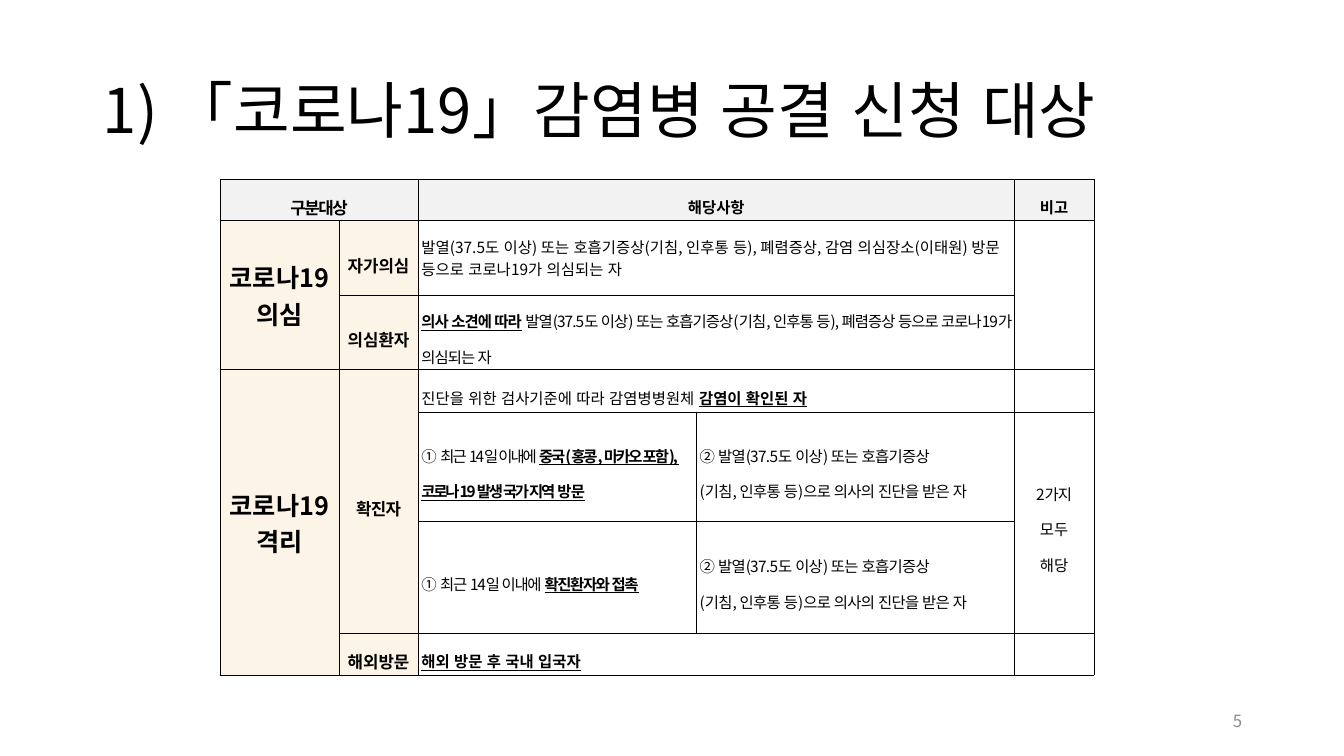
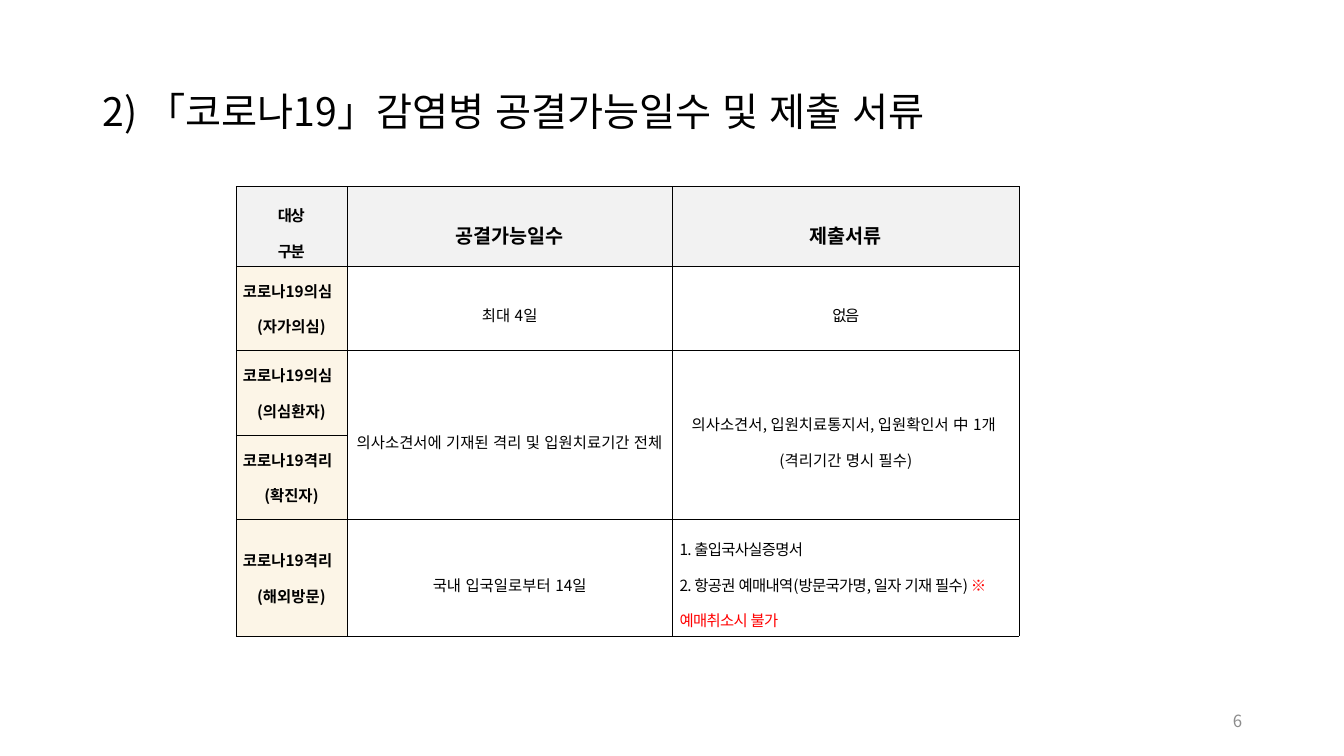
from dataclasses import dataclass
from typing import Optional

from lxml.etree import SubElement
from pptx import Presentation
from pptx.dml.color import RGBColor
from pptx.enum.text import MSO_ANCHOR, MSO_AUTO_SIZE, PP_ALIGN
from pptx.oxml.ns import qn
from pptx.slide import Slide
from pptx.table import _Cell
from pptx.text.text import TextFrame
from pptx.util import Inches, Pt

FONT = "Noto Sans CJK KR"
BLACK, GRAY, RED = "000000", "8C8C8C", "FF0000"
HEADER_FILL, LABEL_FILL = "F2F2F2", "FCF5E7"
BORDER_WIDTH = 0.28
LEFT, CENTER, RIGHT, JUSTIFY = (
    PP_ALIGN.LEFT, PP_ALIGN.CENTER, PP_ALIGN.RIGHT, PP_ALIGN.JUSTIFY)


@dataclass
class Span:
    text: str
    size: float = 11
    bold: bool = False
    underline: bool = False
    spacing: float = 0
    color: str = BLACK


@dataclass
class Para:
    spans: list[Span]
    align: PP_ALIGN = CENTER
    line: float = 1.6


@dataclass
class Entry:
    """Content of a table cell, with the rows and columns it covers."""
    row: int
    column: int
    paras: list[Para]
    fill: Optional[str] = None
    rows: int = 1
    columns: int = 1


@dataclass
class Grid:
    left: float
    top: float
    widths: list[float]
    heights: list[float]
    margins: tuple[float, float]
    entries: list[Entry]


@dataclass
class Page:
    title: str
    title_size: float
    number: str
    grid: Grid


def rgb(color: str) -> RGBColor:
    return RGBColor.from_string(color)


def write(frame: TextFrame, paras: list[Para]) -> None:
    for index, para in enumerate(paras):
        target = frame.add_paragraph() if index else frame.paragraphs[0]
        target.alignment, target.line_spacing = para.align, para.line
        for span in para.spans:
            run = target.add_run()
            run.text = span.text
            style = {"name": FONT, "size": Pt(span.size), "bold": span.bold,
                     "underline": span.underline}
            for name, value in style.items():
                setattr(run.font, name, value)
            run.font.color.rgb = rgb(span.color)
            properties = run.font._element
            properties.set("lang", "ko-KR")
            properties.set("spc", str(round(span.spacing * 100)))
            SubElement(properties, qn("a:ea")).set("typeface", FONT)


def add_borders(cell: _Cell) -> None:
    properties = cell._tc.get_or_add_tcPr()
    for side in ("lnL", "lnR", "lnT", "lnB"):
        line = SubElement(properties, qn(f"a:{side}"), w=str(Pt(BORDER_WIDTH)))
        fill = SubElement(line, qn("a:solidFill"))
        SubElement(fill, qn("a:srgbClr"), val=BLACK)


def add_grid(slide: Slide, grid: Grid) -> None:
    table = slide.shapes.add_table(
        len(grid.heights), len(grid.widths), Inches(grid.left), Inches(grid.top),
        Inches(sum(grid.widths)), Inches(sum(grid.heights))).table
    table.first_row = table.horz_banding = False
    for column, width in zip(table.columns, grid.widths):
        column.width = Inches(width)
    for row, height in zip(table.rows, grid.heights):
        row.height = Inches(height)
    side, end = (Inches(margin) for margin in grid.margins)
    layout = {"margin_left": side, "margin_right": side, "margin_top": end,
              "margin_bottom": end, "vertical_anchor": MSO_ANCHOR.MIDDLE}
    for cell in table.iter_cells():
        add_borders(cell)
        cell.fill.background()
        cell.text_frame.paragraphs[0].font.size = Pt(11)
        for name, value in layout.items():
            setattr(cell, name, value)
    for entry in grid.entries:
        cell = table.cell(entry.row, entry.column)
        if entry.rows > 1 or entry.columns > 1:
            cell.merge(table.cell(entry.row + entry.rows - 1,
                                  entry.column + entry.columns - 1))
        if entry.fill:
            cell.fill.solid()
            cell.fill.fore_color.rgb = rgb(entry.fill)
        write(cell.text_frame, entry.paras)


def add_page(deck: Presentation, page: Page) -> None:
    slide = deck.slides.add_slide(deck.slide_layouts.get_by_name("Title Only"))
    title = slide.shapes.title
    title.left, title.top, title.width, title.height = map(
        Inches, (0.92, 0.4, 11.5, 1.45))
    number = slide.shapes.add_textbox(*map(Inches, (9.42, 6.95, 3, 0.4)))
    title_para = Para([Span(page.title, page.title_size)], LEFT, 0.9)
    number_para = Para([Span(page.number, 12, color=GRAY)], RIGHT, 1)
    for box, para in ((title, title_para), (number, number_para)):
        frame = box.text_frame
        frame.word_wrap = True
        frame.auto_size = MSO_AUTO_SIZE.NONE
        frame.vertical_anchor = MSO_ANCHOR.MIDDLE
        write(frame, [para])
    add_grid(slide, page.grid)


def line(text: str, align: PP_ALIGN = CENTER, spacing: float = 0) -> Para:
    return Para([Span(text, spacing=spacing)], align)


def header(column: int, *texts: str, size: float = 11, spacing: float = 0,
           columns: int = 1) -> Entry:
    paras = [Para([Span(text, size, True, spacing=spacing)]) for text in texts]
    return Entry(0, column, paras, HEADER_FILL, columns=columns)


def group(row: int, rows: int, *texts: str) -> Entry:
    paras = [Para([Span(text, 18, True)], line=1) for text in texts]
    return Entry(row, 0, paras, LABEL_FILL, rows)


def kind(row: int, text: str, rows: int = 1, spacing: float = 0) -> Entry:
    para = Para([Span(text, 12, True, spacing=spacing)])
    return Entry(row, 1, [para], LABEL_FILL, rows)


def target(row: int, name: str, detail: str) -> Entry:
    return Entry(row, 0, [Para([Span(name, bold=True)], LEFT, 1),
                          Para([Span(detail, bold=True)])], LABEL_FILL)


def strong(text: str, spacing: float = 0) -> Span:
    return Span(text, bold=True, underline=True, spacing=spacing)


def detail(row: int, *spans: Span, align: PP_ALIGN = JUSTIFY,
           spacing: float = 1.6) -> Entry:
    return Entry(row, 2, [Para(list(spans), align, spacing)], columns=2)


def symptoms(row: int) -> Entry:
    return Entry(row, 3, [
        line("② 발열(37.5도 이상) 또는 호흡기증상", JUSTIFY, -0.5),
        line("(기침, 인후통 등)으로 의사의 진단을 받은 자", JUSTIFY, -0.5)])


WHO_CAN_APPLY = Grid(
    2.18, 1.78, [1.18, 0.79, 2.76, 3.15, 0.79],
    [0.36, 0.74, 0.74, 0.42, 0.74, 1.11, 0.42], (0.03, 0.01), [
        header(0, "구분대상", size=12, spacing=-1, columns=2),
        header(2, "해당사항", columns=2),
        header(4, "비고"),
        group(1, 2, "코로나19", "의심"),
        kind(1, "자가의심"),
        detail(1, Span("발열(37.5도 이상) 또는 호흡기증상(기침, 인후통 등), 폐렴증상, "
                       "감염 의심장소(이태원) 방문 등으로 코로나19가 의심되는 자"),
               align=LEFT, spacing=1),
        Entry(1, 4, [], rows=2),
        kind(2, "의심환자"),
        detail(2, strong("의사 소견에 따라", -0.7),
               Span(" 발열(37.5도 이상) 또는 호흡기증상(기침, 인후통 등), "
                    "폐렴증상 등으로 코로나19가 의심되는 자", spacing=-0.7)),
        group(3, 4, "코로나19 격리"),
        kind(3, "확진자", rows=3, spacing=-0.5),
        detail(3, Span("진단을 위한 검사기준에 따라 감염병병원체 "),
               strong("감염이 확인된 자")),
        Entry(4, 2, [
            Para([Span("① ", spacing=-0.5),
                  Span("최근 14일 이내에 ", spacing=-1.5),
                  strong("중국(홍콩, 마카오 포함), ", -1.5)], JUSTIFY),
            Para([strong("코로나19 발생 국가 지역 ", -1.6),
                  strong("방문", -0.5)], JUSTIFY)]),
        symptoms(4),
        Entry(4, 4, [line("2가지", spacing=-0.7), line("모두"), line("해당")],
              rows=2),
        Entry(5, 2, [
            Para([Span("① ", spacing=-0.7),
                  Span("최근 14일 이내에 ", spacing=-1),
                  strong("확진환자와 접촉", -1)], JUSTIFY)]),
        symptoms(5),
        kind(6, "해외방문"),
        detail(6, strong("해외 방문 후 국내 입국자")),
    ])

DAYS_AND_PAPERS = Grid(
    2.34, 1.85, [1.1, 3.23, 3.44], [0.79] * 4 + [1.16], (0.07, 0.02), [
        header(0, "대상", "구분", spacing=-1),
        header(1, "공결가능일수", size=14),
        header(2, "제출서류", size=14),
        target(1, "코로나19의심", "(자가의심)"),
        Entry(1, 1, [line("최대 4일")]),
        Entry(1, 2, [line("없음", spacing=-1)]),
        target(2, "코로나19의심", "(의심환자)"),
        Entry(2, 1, [line("의사소견서에 기재된 격리 및 입원치료기간 전체")], rows=2),
        Entry(2, 2, [line("의사소견서, 입원치료통지서, 입원확인서 中 1개 "),
                     line("(격리기간 명시 필수)")], rows=2),
        target(3, "코로나19격리", "(확진자)"),
        target(4, "코로나19격리", "(해외방문)"),
        Entry(4, 1, [line("국내 입국일로부터 14일")]),
        Entry(4, 2, [
            line("1. 출입국사실증명서", LEFT, -0.5),
            Para([Span("2. 항공권 예매내역(방문국가명, 일자 기재 필수) ", spacing=-0.5),
                  Span("※예매취소시 불가", spacing=-0.5, color=RED)], LEFT)]),
    ])

PAGES = [
    Page("1) 「코로나19」감염병 공결 신청 대상", 44, "5", WHO_CAN_APPLY),
    Page("2) 「코로나19」감염병 공결가능일수 및 제출 서류", 28, "6", DAYS_AND_PAPERS),
]


def main() -> None:
    deck = Presentation()
    deck.slide_width, deck.slide_height = Inches(13.33), Inches(7.5)
    for page in PAGES:
        add_page(deck, page)
    deck.save("out.pptx")


if __name__ == "__main__":
    main()
